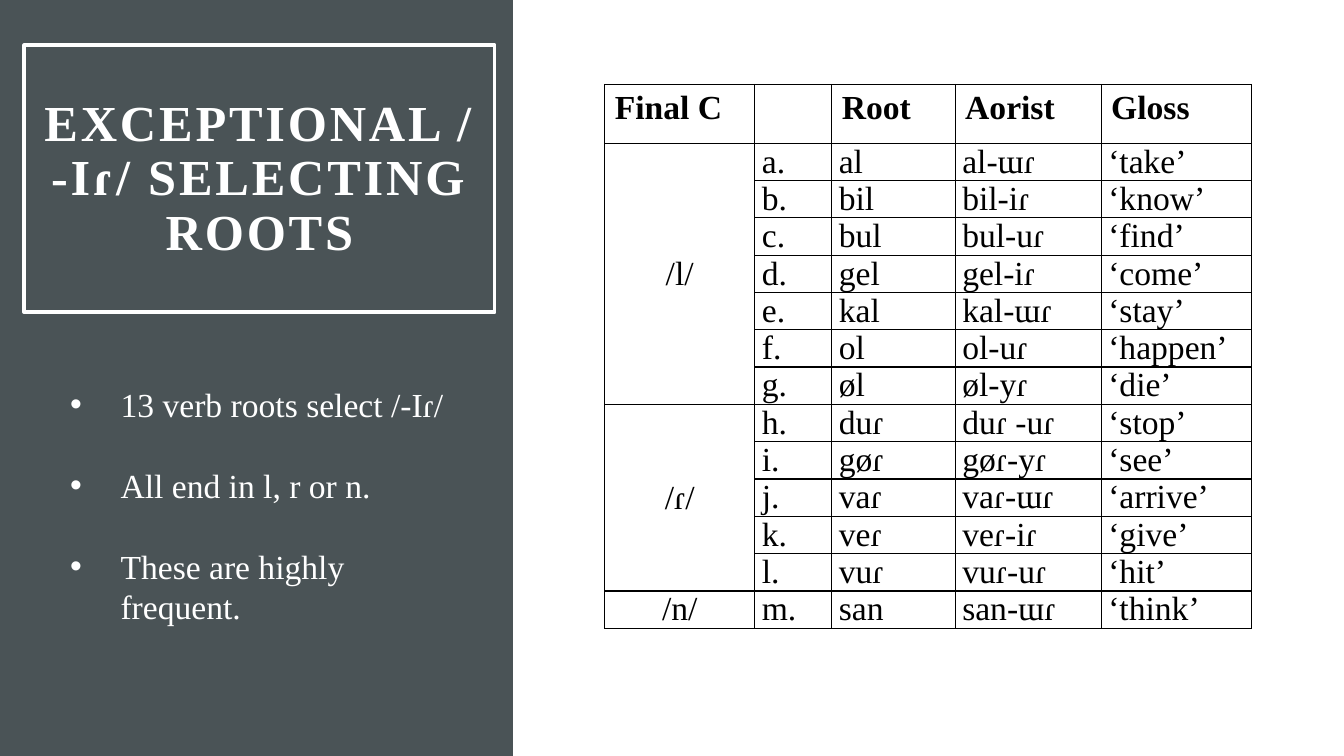
from lxml.etree import SubElement
from pptx import Presentation
from pptx.dml.color import RGBColor
from pptx.enum.shapes import MSO_SHAPE
from pptx.enum.text import MSO_ANCHOR, PP_ALIGN
from pptx.oxml import parse_xml
from pptx.oxml.ns import nsdecls, qn
from pptx.util import Cm, Pt

DARK, WHITE, BLACK = "4A5356", "FFFFFF", "000000"
HEADER = ["Final C", "", "Root", "Aorist", "Gloss"]
VERBS = {
    "/l/": [("al", "al-ɯɾ", "‘take’"), ("bil", "bil-iɾ", "‘know’"),
            ("bul", "bul-uɾ", "‘find’"), ("gel", "gel-iɾ", "‘come’"),
            ("kal", "kal-ɯɾ", "‘stay’"), ("ol", "ol-uɾ", "‘happen’"),
            ("øl", "øl-yɾ", "‘die’")],
    "/ɾ/": [("duɾ", "duɾ -uɾ", "‘stop’"), ("gøɾ", "gøɾ-yɾ", "‘see’"),
            ("vaɾ", "vaɾ-ɯɾ", "‘arrive’"), ("veɾ", "veɾ-iɾ", "‘give’"),
            ("vuɾ", "vuɾ-uɾ", "‘hit’")],
    "/n/": [("san", "san-ɯɾ", "‘think’")],
}
POINTS = ["13 verb roots select /-Iɾ/", "All end in l, r or n.",
          "These are highly frequent."]


def apply(target, values):
    """Set every attribute in the dict on the target."""
    for name, value in values.items():
        setattr(target, name, value)


def paint(fill, color):
    """Give a fill one solid colour."""
    fill.solid()
    fill.fore_color.rgb = RGBColor.from_string(color)


def write(p, text, color, size, leading, bold=False, **layout):
    """Write one run into a paragraph and return the run."""
    apply(p, {"line_spacing": Pt(leading), **layout})
    r = p.add_run()
    r.text = text
    apply(r.font, {"name": "Times New Roman", "size": Pt(size), "bold": bold})
    paint(r.font.fill, color)
    return r


def add_box(s, x, y, w, h):
    """Add a plain rectangle without shadow, fill or line."""
    sp = s.shapes.add_shape(MSO_SHAPE.RECTANGLE, Cm(x), Cm(y), Cm(w), Cm(h))
    sp.shadow.inherit = False
    sp.fill.background()
    sp.line.fill.background()
    return sp


def add_title(s, text):
    """Add the framed title."""
    sp = add_box(s, 0.61, 1.14, 11.86, 6.73)
    paint(sp.line.fill, WHITE)
    sp.line.width = Pt(2.5)
    tf = sp.text_frame
    apply(tf, {"word_wrap": True, "vertical_anchor": MSO_ANCHOR.MIDDLE})
    apply(tf, {f"margin_{side}": Cm(0.51)
               for side in ("left", "top", "right", "bottom")})
    r = write(tf.paragraphs[0], text, WHITE, 36, 39, True,
              alignment=PP_ALIGN.CENTER)
    r.font._element.set("spc", "200")


def add_bullets(s, points):
    """Add the bulleted remarks."""
    tf = s.shapes.add_textbox(Cm(1.52), Cm(9.53), Cm(10.39), Cm(6.4)).text_frame
    tf.word_wrap = True
    for i, text in enumerate(points):
        p = tf.add_paragraph() if i else tf.paragraphs[0]
        write(p, text, WHITE, 24, 29, space_after=Pt(29))
        pPr = p._p.get_or_add_pPr()
        pPr.set("marL", str(Cm(1.27)))
        pPr.set("indent", str(-Cm(1.27)))
        SubElement(pPr, qn("a:buFont")).set("typeface", "Arial")
        SubElement(pPr, qn("a:buChar")).set("char", "•")


def add_borders(cell):
    """Draw a thin black line on all four sides of a cell."""
    tcPr = cell._tc.get_or_add_tcPr()
    for i, side in enumerate("LRTB"):
        tcPr.insert(i, parse_xml(
            f'<a:ln{side} {nsdecls("a")} w="{Pt(1)}"><a:solidFill>'
            f'<a:srgbClr val="{BLACK}"/></a:solidFill></a:ln{side}>'))


def fill_cell(cell, text, header, group):
    """Format one table cell and write its text."""
    cell.fill.background()
    add_borders(cell)
    if not header:
        apply(cell, {"margin_left": Cm(0.18), "margin_right": Cm(0.18),
                     "margin_top": 0, "margin_bottom": 0})
    layout = {}
    if group:
        cell.vertical_anchor = MSO_ANCHOR.MIDDLE
        layout["alignment"] = PP_ALIGN.CENTER
    if text:
        write(cell.text_frame.paragraphs[0], text, BLACK, 24, 26.5, header,
              **layout)


def add_verb_table(s):
    """Add the table of roots grouped by final consonant."""
    rows, spans = [HEADER], []
    for final, verbs in VERBS.items():
        spans.append((len(rows), len(rows) + len(verbs) - 1))
        for i, verb in enumerate(verbs):
            letter = "abcdefghijklm"[len(rows) - 1]
            rows.append(["" if i else final, f"{letter}.", *verb])
    widths = [3.78, 1.94, 3.11, 3.68, 3.78]
    heights = [1.48] + [0.94] * (len(rows) - 1)
    table = s.shapes.add_table(len(rows), len(widths), Cm(15.24), Cm(2.13),
                               Cm(sum(widths)), Cm(sum(heights))).table
    apply(table, {"first_row": False, "horz_banding": False})
    for col, width in zip(table.columns, widths):
        col.width = Cm(width)
    for i, (row, height) in enumerate(zip(rows, heights)):
        table.rows[i].height = Cm(height)
        for j, text in enumerate(row):
            fill_cell(table.cell(i, j), text, i == 0, i > 0 and j == 0)
    for first, last in spans:
        if last > first:
            table.cell(first, 0).merge(table.cell(last, 0))


def main():
    """Build the slide and save it."""
    prs = Presentation()
    apply(prs, {"slide_width": Cm(33.87), "slide_height": Cm(19.05)})
    s = prs.slides.add_slide(prs.slide_layouts[6])
    paint(add_box(s, 0, 0, 12.93, 19.05).fill, DARK)
    add_title(s, "EXCEPTIONAL /-Iɾ/ SELECTING ROOTS")
    add_verb_table(s)
    add_bullets(s, POINTS)
    prs.save("out.pptx")


if __name__ == "__main__":
    main()
